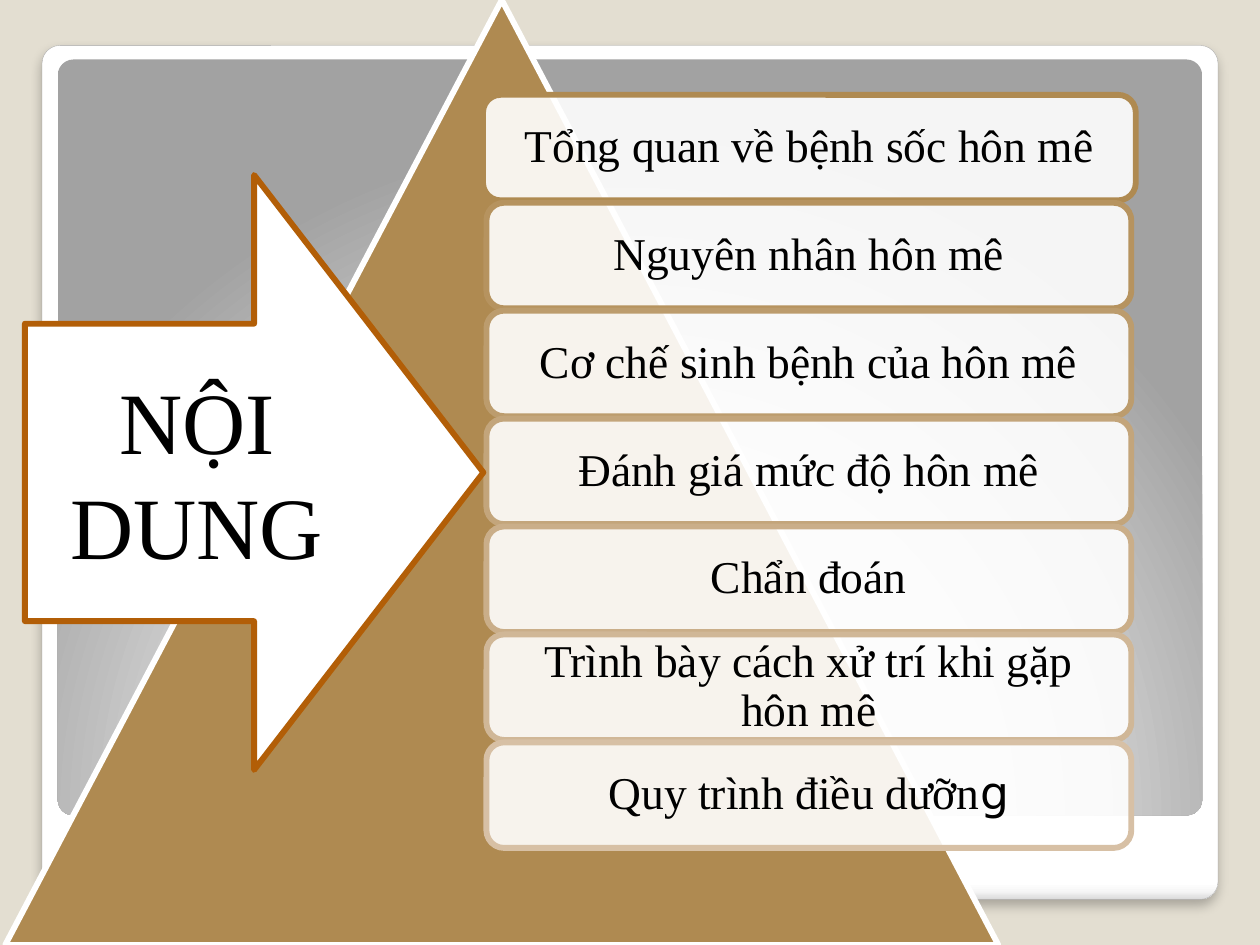
from lxml.etree import SubElement
from pptx import Presentation
from pptx.dml.color import RGBColor
from pptx.enum.shapes import MSO_SHAPE as Shape
from pptx.enum.text import MSO_ANCHOR as Anchor, PP_ALIGN as Align
from pptx.oxml import parse_xml
from pptx.oxml.ns import nsdecls, qn
from pptx.util import Pt

BACKDROP = RGBColor(0xE3, 0xDE, 0xD1)
WHITE = RGBColor(0xFF, 0xFF, 0xFF)
BLACK = RGBColor(0, 0, 0)
FRAME_LINE = RGBColor(0xA4, 0xA4, 0xA4)
BRONZE = RGBColor(0xAF, 0x8A, 0x51)
PALE_BRONZE = RGBColor(0xD7, 0xC0, 0xA5)
ORANGE = RGBColor(0xB2, 0x5E, 0x07)

FRAME_STOPS = [(0, "FFFFFF"), (98, "FFFFFF"), (99, "F7F7F7"), (100, "DADADA")]
PANEL_STOPS = [(0, "FFFFFF"), (55, "E1E1E1"), (100, "A2A2A2")]
LINEAR_DOWN = '<a:lin ang="5400000" scaled="0"/>'
CIRCLE_BELOW = ('<a:path path="circle"><a:fillToRect l="50000" t="175000" '
                'r="50000" b="-75000"/></a:path>')

FONT = "Times New Roman"
BORDER = 3.35
PITCH = 61.67
# Each topic is a list of (text, font) runs.
TOPICS = [
    [("Tổng quan về bệnh sốc hôn mê", FONT)],
    [("Nguyên nhân hôn mê", FONT)],
    [("Cơ chế sinh bệnh của hôn mê", FONT)],
    [("Đánh giá mức độ hôn mê", FONT)],
    [("Chẩn đoán", FONT)],
    [("Trình bày cách xử trí khi gặp hôn mê", FONT)],
    [("Quy trình điều dưỡn", FONT), ("g", "DejaVu Sans")],
]


def add_shape(slide, kind, box, fill=None, line=None, width=BORDER):
    sp = slide.shapes.add_shape(kind, *(Pt(v) for v in box))
    sp.shadow.inherit = False
    if fill is None:
        sp.fill.background()
    else:
        sp.fill.solid()
        sp.fill.fore_color.rgb = fill
    if line is None:
        sp.line.fill.background()
    else:
        sp.line.color.rgb = line
        sp.line.width = Pt(width)
    return sp


def set_gradient(sp, stops, direction):
    """Replace the empty fill of a shape with a gradient of (percent, hex) stops."""
    stops_xml = "".join(
        f'<a:gs pos="{pos * 1000}"><a:srgbClr val="{color}"/></a:gs>'
        for pos, color in stops)
    gradient = parse_xml(
        f'<a:gradFill {nsdecls("a")} rotWithShape="1">'
        f'<a:gsLst>{stops_xml}</a:gsLst>{direction}</a:gradFill>')
    spPr = sp._element.spPr
    spPr.replace(spPr.find(qn("a:noFill")), gradient)


def set_opacity(sp, percent):
    color = sp._element.spPr.find(qn("a:solidFill"))[0]
    SubElement(color, qn("a:alpha"), val=str(percent * 1000))


def add_soft_shadow(sp):
    sp._element.spPr.find(qn("a:effectLst")).append(parse_xml(
        f'<a:outerShdw {nsdecls("a")} blurRad="{Pt(6)}" dist="{Pt(4)}" '
        'dir="5400000" algn="tl" rotWithShape="0">'
        '<a:srgbClr val="000000"><a:alpha val="25000"/></a:srgbClr>'
        '</a:outerShdw>'))


def write_text(sp, runs, size):
    tf = sp.text_frame
    tf.word_wrap = True
    tf.vertical_anchor = Anchor.MIDDLE
    p = tf.paragraphs[0]
    p.alignment = Align.CENTER
    for text, font in runs:
        r = p.add_run()
        r.text = text
        r.font.name = font
        r.font.size = Pt(size)
        r.font.color.rgb = BLACK


def blend(start, end, t):
    return RGBColor(*(round(a + (b - a) * t) for a, b in zip(start, end)))


def add_frame(slide):
    frame = add_shape(slide, Shape.ROUNDED_RECTANGLE, (24, 26, 672, 488),
                      line=FRAME_LINE, width=0.16)
    set_gradient(frame, FRAME_STOPS, LINEAR_DOWN)
    add_soft_shadow(frame)
    panel = add_shape(slide, Shape.ROUNDED_RECTANGLE, (33, 34, 654, 432))
    set_gradient(panel, PANEL_STOPS, CIRCLE_BELOW)
    for sp in (frame, panel):
        sp.adjustments[0] = 0.021


def add_topic(slide, index, runs):
    left, width = (276, 373) if index == 0 else (278, 368.5)
    color = blend(BRONZE, PALE_BRONZE, index / (len(TOPICS) - 1))
    sp = add_shape(slide, Shape.ROUNDED_RECTANGLE,
                   (left, 54.2 + index * PITCH, width, 60.3), WHITE, color)
    set_opacity(sp, 90)
    tf = sp.text_frame
    tf.margin_left = tf.margin_right = tf.margin_top = tf.margin_bottom = Pt(7.8)
    write_text(sp, runs, 26)
    tf.paragraphs[0].line_spacing = 0.9


def main():
    prs = Presentation()
    prs.slide_width, prs.slide_height = Pt(720), Pt(540)
    slide = prs.slides.add_slide(prs.slide_layouts[6])
    slide.background.fill.solid()
    slide.background.fill.fore_color.rgb = BACKDROP

    add_frame(slide)
    add_shape(slide, Shape.ISOSCELES_TRIANGLE, (3, 0, 567.5, 540), BRONZE, WHITE)
    for index, runs in enumerate(TOPICS):
        add_topic(slide, index, runs)
    arrow = add_shape(slide, Shape.RIGHT_ARROW, (14.2, 100, 262, 340), WHITE, ORANGE)
    write_text(arrow, [("NỘI DUNG", FONT)], 50)
    prs.save("out.pptx")


if __name__ == "__main__":
    main()
